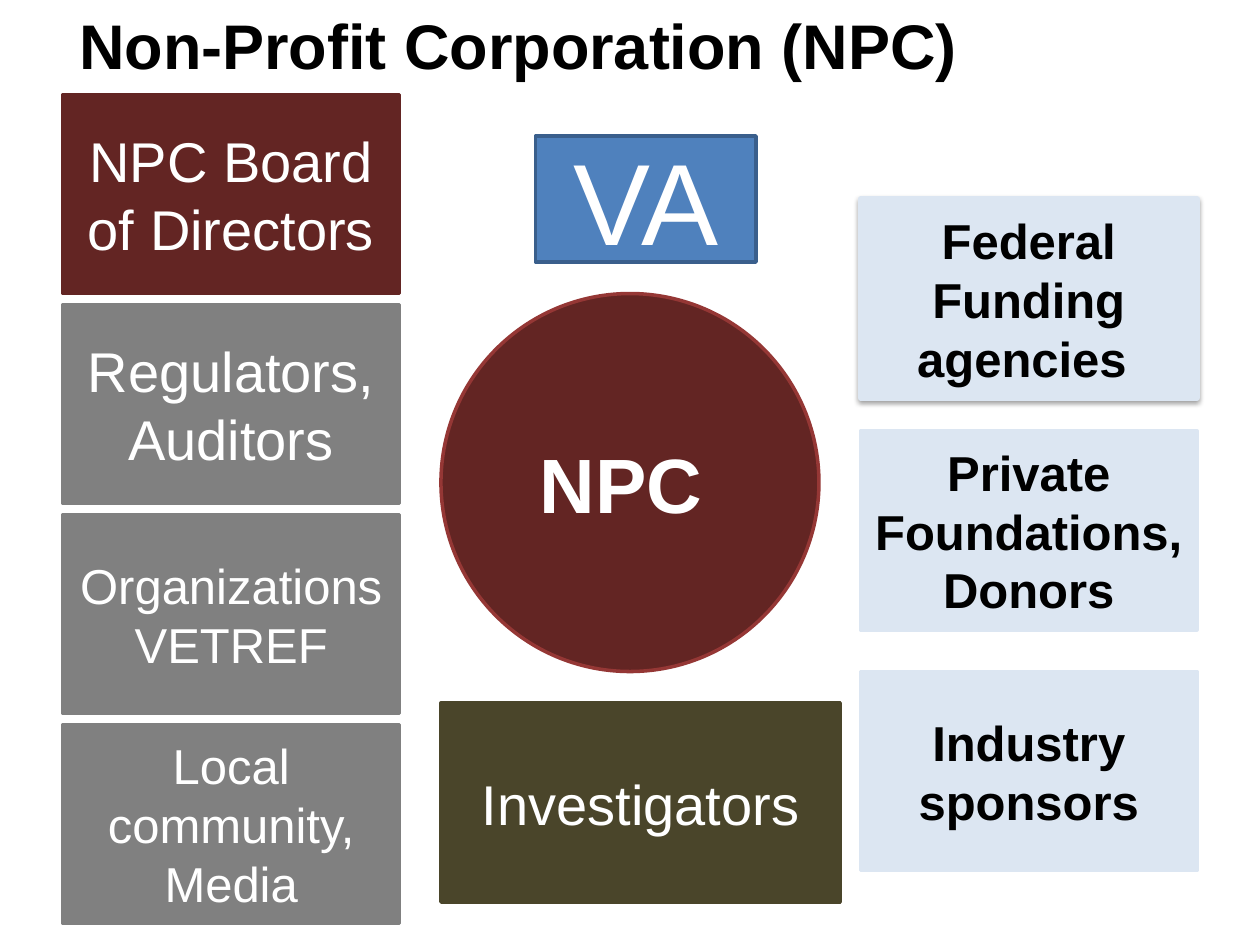
from dataclasses import dataclass

from lxml import etree
from pptx import Presentation
from pptx.dml.color import RGBColor
from pptx.enum.shapes import MSO_SHAPE
from pptx.enum.text import MSO_ANCHOR, MSO_AUTO_SIZE, PP_ALIGN
from pptx.oxml.ns import qn
from pptx.util import Inches, Pt

RECTANGLE, ELLIPSE = MSO_SHAPE.RECTANGLE, MSO_SHAPE.OVAL
CENTER, MIDDLE = PP_ALIGN.CENTER, MSO_ANCHOR.MIDDLE
FIT_SHAPE = MSO_AUTO_SIZE.SHAPE_TO_FIT_TEXT

FONT = "Arial"
WHITE, BLACK = "FFFFFF", "000000"
MAROON, RED, GRAY = "632523", "953735", "808080"
BLUE, DARK_BLUE, PALE_BLUE, OLIVE = "4F81BD", "3A5F8C", "DCE6F2", "4A452A"

BOX_WIDTH, BOX_HEIGHT = 2.67, 1.58
LEFT_COLUMN, MIDDLE_COLUMN, RIGHT_COLUMN = 0.5, 3.5, 6.83
LEFT_TOP, LEFT_STEP = 0.75, 5 / 3


@dataclass
class Box:
    lines: list[str]
    left: float
    top: float
    fill: str
    size: int
    width: float = BOX_WIDTH
    height: float = BOX_HEIGHT
    border: str = ""
    border_width: float = 2
    color: str = WHITE
    bold: bool = False
    shape: MSO_SHAPE = RECTANGLE


def rgb(color: str) -> RGBColor:
    return RGBColor.from_string(color)


def add_span(para, text: str, color: str, **font_format):
    span = para.add_run()
    span.text = text
    span.font.color.rgb = rgb(color)
    for name, value in {"name": FONT, **font_format}.items():
        setattr(span.font, name, value)


def draw_box(page, box: Box):
    shape = page.shapes.add_shape(
        box.shape, Inches(box.left), Inches(box.top), Inches(box.width), Inches(box.height)
    )
    shape.shadow.inherit = False
    shape.fill.solid()
    shape.fill.fore_color.rgb = rgb(box.fill)
    shape.line.color.rgb = rgb(box.border or box.fill)
    shape.line.width = Pt(box.border_width)
    frame = shape.text_frame
    frame.word_wrap = True
    frame.vertical_anchor = MIDDLE
    for index, line in enumerate(box.lines):
        para = frame.add_paragraph() if index else frame.paragraphs[0]
        para.alignment = CENTER
        add_span(para, line, box.color, size=Pt(box.size), bold=box.bold)
    return shape


def add_drop_shadow(shape):
    """Cast a soft black shadow straight down."""
    effects = shape._element.spPr.find(qn("a:effectLst"))
    shadow = etree.SubElement(
        effects, qn("a:outerShdw"), blurRad=str(Pt(3.1)), dist=str(Pt(1.6)),
        dir="5400000", rotWithShape="0",
    )
    color = etree.SubElement(shadow, qn("a:srgbClr"), val=BLACK)
    etree.SubElement(color, qn("a:alpha"), val="38000")


def draw_title(page, text: str):
    title = page.shapes.add_textbox(Inches(0.53), Inches(0), Inches(7.24), Inches(0.71))
    frame = title.text_frame
    frame.word_wrap = False
    frame.auto_size = FIT_SHAPE
    add_span(frame.paragraphs[0], text, BLACK, size=Pt(36), bold=True)


def draw_center(page):
    circle = draw_box(page, Box(["NPC"], MIDDLE_COLUMN, 2.33, MAROON, 44, 3, 3,
                                border=RED, bold=True, shape=ELLIPSE))
    add_span(circle.text_frame.paragraphs[0], " ", WHITE, size=Pt(36), bold=False)
    draw_box(page, Box(["VA"], 4.25, 1.08, BLUE, 66, 1.75, 1, border=DARK_BLUE))
    draw_box(page, Box(["Investigators"], MIDDLE_COLUMN, 5.58, OLIVE, 32, width=3.17))


def draw_overseers(page):
    overseers = [
        (["NPC Board of Directors"], MAROON, 32),
        (["Regulators,", "Auditors"], GRAY, 32),
        (["Organizations", "VETREF"], GRAY, 28),
        (["Local community, Media"], GRAY, 28),
    ]
    for row, (lines, fill, size) in enumerate(overseers):
        draw_box(page, Box(lines, LEFT_COLUMN, LEFT_TOP + row * LEFT_STEP, fill, size))


def draw_funders(page):
    funders = [
        (["Federal", "Funding agencies "], 1.58, 3),
        (["Private Foundations,", "Donors"], 3.42, 2),
        (["Industry sponsors"], 5.33, 2),
    ]
    shapes = [
        draw_box(page, Box(lines, RIGHT_COLUMN, top, PALE_BLUE, 28,
                           border_width=border_width, color=BLACK, bold=True))
        for lines, top, border_width in funders
    ]
    add_drop_shadow(shapes[0])


def main():
    deck = Presentation()
    deck.slide_width, deck.slide_height = Inches(10), Inches(7.5)
    page = deck.slides.add_slide(deck.slide_layouts[6])
    draw_center(page)
    draw_funders(page)
    draw_overseers(page)
    draw_title(page, "Non-Profit Corporation (NPC)")
    deck.save("out.pptx")


if __name__ == "__main__":
    main()
